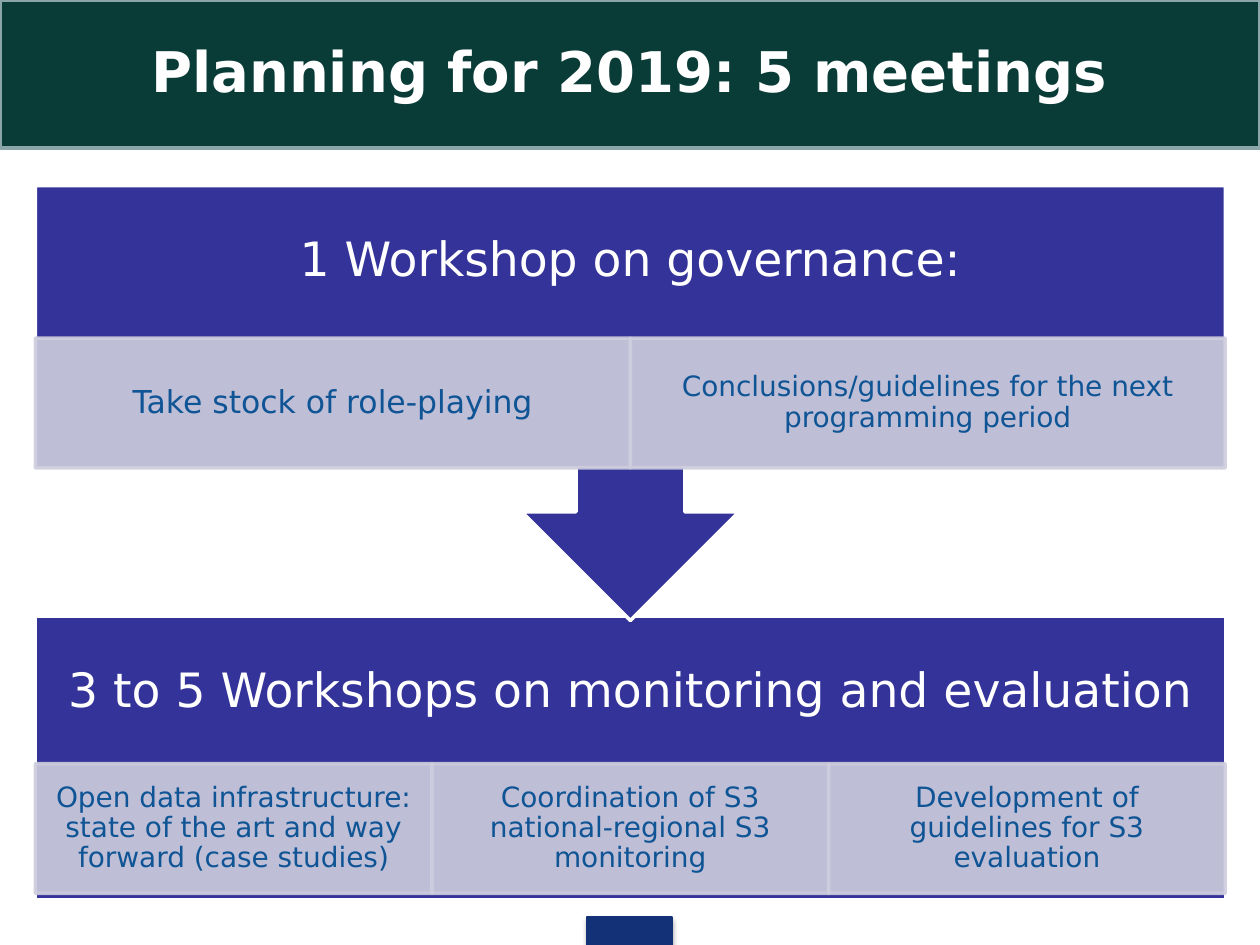
from pptx import Presentation
from pptx.dml.color import RGBColor
from pptx.enum.shapes import MSO_SHAPE
from pptx.enum.text import MSO_ANCHOR, PP_ALIGN
from pptx.oxml import parse_xml
from pptx.oxml.ns import nsdecls
from pptx.util import Pt

GREEN = RGBColor(0x09, 0x3B, 0x37)
GREY = RGBColor(0x8A, 0xA6, 0xA8)
NAVY = RGBColor(0x13, 0x31, 0x76)
INDIGO = RGBColor(0x33, 0x33, 0x99)
LILAC = RGBColor(0xCE, 0xCE, 0xDE)
BLUE = RGBColor(0x0F, 0x54, 0x94)
WHITE = RGBColor(0xFF, 0xFF, 0xFF)
LEFT, WIDTH = 20.2, 680
HEAD_H, TILE_H = 87, 74.2

deck = Presentation()
deck.slide_width, deck.slide_height = Pt(720), Pt(540)
slide = deck.slides.add_slide(deck.slide_layouts[6])


def add_box(x, y, w, h, fill, line, weight=2, kind=MSO_SHAPE.RECTANGLE, alpha=None):
    """Add a filled shape; alpha is the opacity of fill and line in percent."""
    box = slide.shapes.add_shape(kind, Pt(x), Pt(y), Pt(w), Pt(h))
    box.shadow.inherit = False
    box.fill.solid()
    box.fill.fore_color.rgb = fill
    box.line.color.rgb = line
    box.line.width = Pt(weight)
    if alpha:
        for color in box._element.spPr.xpath(".//a:srgbClr"):
            color.append(parse_xml(f'<a:alpha {nsdecls("a")} val="{alpha * 1000}"/>'))
    return box


def set_text(shape, text, size, color, bold=False, inset=(7.2, 3.6), before=0):
    frame = shape.text_frame
    frame.word_wrap = True
    frame.vertical_anchor = MSO_ANCHOR.MIDDLE
    frame.margin_left = frame.margin_right = Pt(inset[0])
    frame.margin_top = frame.margin_bottom = Pt(inset[1])
    para = frame.paragraphs[0]
    para.alignment = PP_ALIGN.CENTER
    para.line_spacing = 0.9
    para.space_before = Pt(before)
    run = para.add_run()
    run.text = text
    run.font.name = "DejaVu Sans"
    run.font.size = Pt(size)
    run.font.bold = bold
    run.font.color.rgb = color


# Footer tab with a soft shadow
tab = add_box(335.5, 524, 48.5, 16, NAVY, NAVY, weight=0.75)
tab._element.spPr.find("{*}effectLst").append(parse_xml(
    f'<a:outerShdw {nsdecls("a")} blurRad="{Pt(3.1)}" dist="{Pt(1.8)}" dir="5400000">'
    '<a:srgbClr val="000000"><a:alpha val="35000"/></a:srgbClr></a:outerShdw>'))

title = add_box(0, 0, 720, 84.5, GREEN, GREY)
set_text(title, "Planning for 2019: 5 meetings", 32, WHITE, bold=True)

# Each stage: kind, top, height, turn, heading, top of tiles, tiles with text size
stages = [
    (MSO_SHAPE.RECTANGLE, 352.3, 161.7, 0,
     "3 to 5 Workshops on monitoring and evaluation", 436.4,
     [("Open data infrastructure: state of the art and way forward (case studies)", 16),
      ("Coordination of S3 national-regional S3 monitoring", 16),
      ("Development of guidelines for S3 evaluation", 16)]),
    (MSO_SHAPE.UP_ARROW_CALLOUT, 106, 248.6, 180,
     "1 Workshop on governance:", 193.2,
     [("Take stock of role-playing", 18),
      ("Conclusions/guidelines for the next programming period", 16)]),
]
for kind, top, height, turn, heading, tile_top, tiles in stages:
    panel = add_box(LEFT, top, WIDTH, height, INDIGO, WHITE, kind=kind)
    panel.rotation = turn
    label = slide.shapes.add_textbox(Pt(LEFT), Pt(top), Pt(WIDTH), Pt(HEAD_H))
    set_text(label, heading, 27, WHITE, inset=(15, 15))
    step = WIDTH / len(tiles)
    for i, (text, size) in enumerate(tiles):
        tile = add_box(LEFT + i * step, tile_top, step, TILE_H, LILAC, LILAC, alpha=90)
        set_text(tile, text, size, BLUE, inset=(size * 0.55, 1.6))

deck.save("out.pptx")
